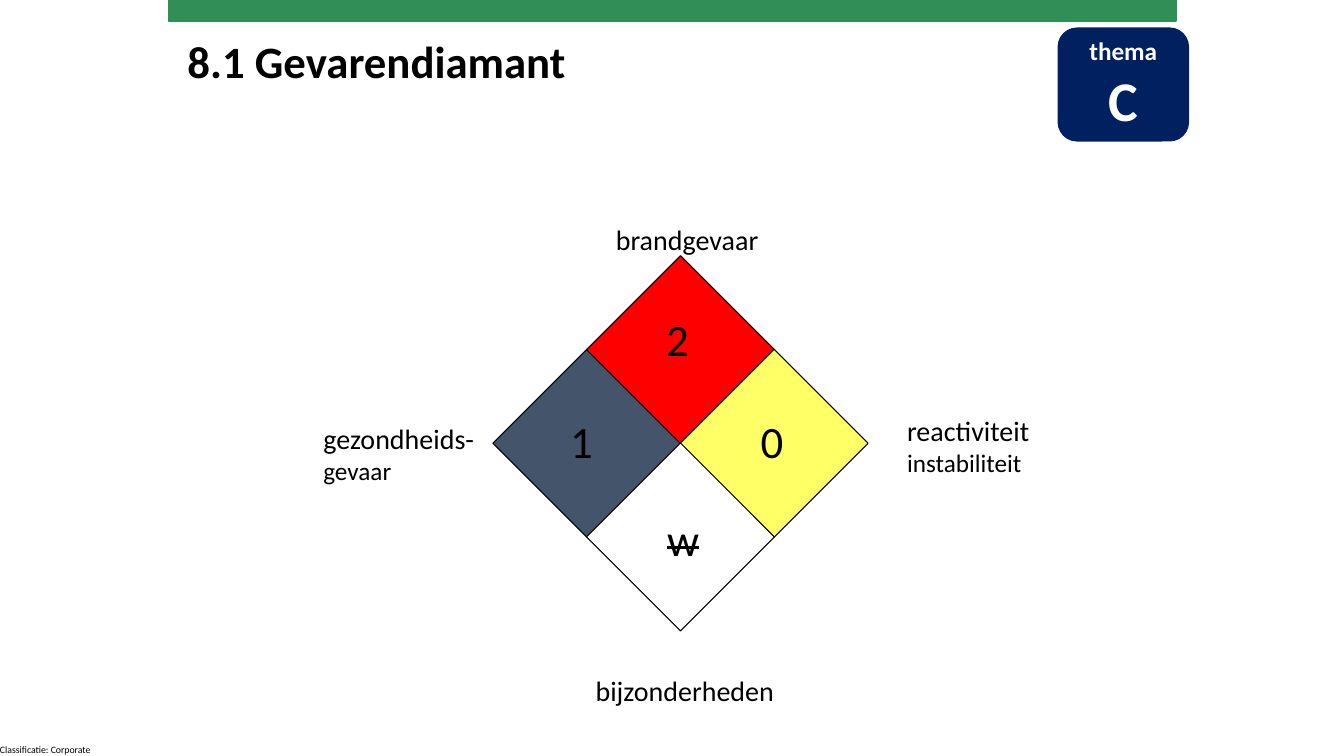
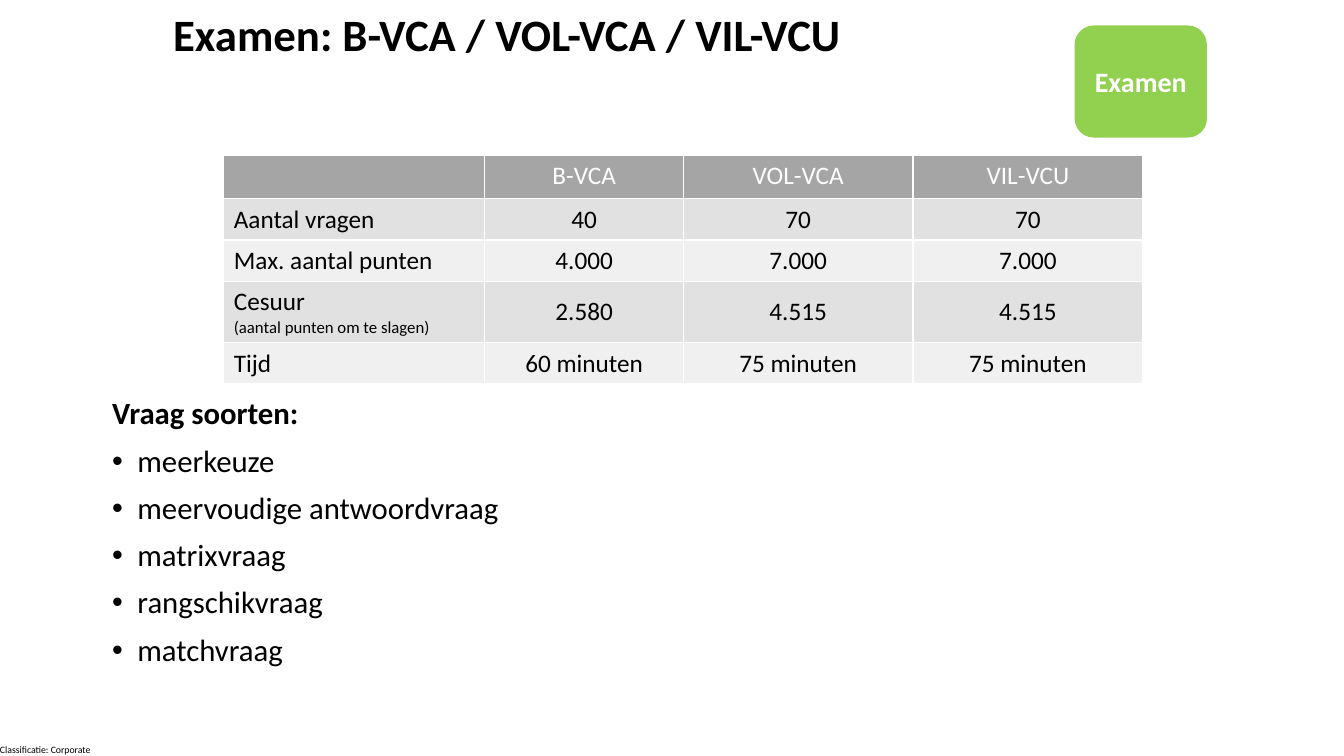
"""Build two safety-course slides: the hazard diamond and the exam overview."""
from lxml import etree
from pptx import Presentation
from pptx.dml.color import RGBColor
from pptx.enum.shapes import MSO_SHAPE
from pptx.enum.text import MSO_ANCHOR, MSO_AUTO_SIZE, PP_ALIGN
from pptx.oxml.ns import qn
from pptx.util import Cm, Pt

RECTANGLE, ROUNDED = MSO_SHAPE.RECTANGLE, MSO_SHAPE.ROUNDED_RECTANGLE
TOP, MIDDLE = MSO_ANCHOR.TOP, MSO_ANCHOR.MIDDLE
LEFT, CENTER = PP_ALIGN.LEFT, PP_ALIGN.CENTER
NO_AUTOFIT = MSO_AUTO_SIZE.NONE

FONT = "Calibri"
COLORS = {
    "black": "000000", "white": "FFFFFF", "green": "328E57", "navy": "002060",
    "lime": "92D050", "slate": "44546A", "red": "FF0000", "yellow": "FFFF66",
    "header": "A5A5A5", "odd_row": "E1E1E1", "even_row": "F0F0F0",
}


def write(frame, text, sizes=(18,), color="black", bold=False, align=LEFT,
          anchor=TOP, spacing=1.0, strike=False):
    """Fill a text frame, one paragraph per line of text."""
    frame.word_wrap = True
    frame.vertical_anchor = anchor
    for index, line in enumerate(text.split("\n")):
        para = frame.paragraphs[0] if index == 0 else frame.add_paragraph()
        para.alignment = align
        para.line_spacing = spacing
        span = para.add_run()
        span.text = line
        span.font.name = FONT
        span.font.size = Pt(sizes[min(index, len(sizes) - 1)])
        span.font.bold = bold
        span.font.color.rgb = RGBColor.from_string(COLORS[color])
        if strike:
            span.font._element.set("strike", "sngStrike")


def add_block(page, kind, area, fill, line, weight=1):
    """Add a filled shape without shadow."""
    block = page.shapes.add_shape(kind, *map(Cm, area))
    block.shadow.inherit = False
    block.fill.solid()
    block.fill.fore_color.rgb = RGBColor.from_string(COLORS[fill])
    block.line.color.rgb = RGBColor.from_string(COLORS[line])
    block.line.width = Pt(weight)
    return block


deck = Presentation()
deck.slide_width, deck.slide_height = Cm(33.87), Cm(19.05)
diamond_page = deck.slides.add_slide(deck.slide_layouts[5])
exam_page = deck.slides.add_slide(deck.slide_layouts[1])

footer = diamond_page.shapes.add_textbox(Cm(0), Cm(18.75), Cm(3), Cm(0.3))
frame = footer.text_frame
frame.margin_left = frame.margin_right = frame.margin_top = frame.margin_bottom = 0
write(frame, "Classificatie: Corporate", (7,))
footer.element.nvSpPr.cNvPr.set("id", "20")
deck.slide_master.shapes.element.append(footer.element)

pages = [
    (diamond_page, "8.1 Gevarendiamant", (4.47, 0.71, 22.86, 3.18), 1.0,
     "thema\nC", (18, 40), "navy", (26.67, 0.71, 3.28, 2.84)),
    (exam_page, "Examen: B-VCA / VOL-VCA / VIL-VCU", (4.11, 0.2, 29.21, 3.68), 0.9,
     "Examen", (20,), "lime", (27.1, 0.66, 3.3, 2.79)),
]
for page, heading, area, spacing, theme, sizes, fill, badge_area in pages:
    title = page.shapes.title
    title.left, title.top, title.width, title.height = map(Cm, area)
    title.text_frame.auto_size = NO_AUTOFIT
    write(title.text_frame, heading, (32,), bold=True, spacing=spacing)
    badge = add_block(page, ROUNDED, badge_area, fill, fill)
    write(badge.text_frame, theme, sizes, "white", True, CENTER, MIDDLE)

add_block(diamond_page, RECTANGLE, (4.24, 0, 25.4, 0.53), "green", "green")

center_x, center_y, reach, side = 17.15, 11.17, 2.36, 3.35
squares = [(-1, 0, "slate"), (0, -1, "red"), (1, 0, "yellow"), (0, 1, "white")]
for across, down, fill in squares:
    left = center_x + across * reach - side / 2
    top = center_y + down * reach - side / 2
    square = add_block(diamond_page, RECTANGLE, (left, top, side, side), fill, "black", 0.75)
    square.rotation = 315

labels = [
    ("brandgevaar", (20,), 15.27, 5.49, 5),
    ("gezondheids-\ngevaar", (20, 18), 7.9, 10.49, 4.6),
    ("reactiviteit\ninstabiliteit", (20, 18), 22.61, 10.29, 5.9),
    ("bijzonderheden", (20,), 14.76, 16.84, 5.5),
    ("1", (32,), 14.12, 10.31, 1.4),
    ("2", (32,), 16.54, 7.72, 1.4),
    ("0", (32,), 18.92, 10.31, 1.4),
    ("w", (32,), 16.56, 12.78, 1.4),
]
for text, sizes, left, top, width in labels:
    height = 0.25 + sum(sizes) * 0.043
    box = diamond_page.shapes.add_textbox(*map(Cm, (left, top, width, height)))
    write(box.text_frame, text, sizes, strike=text == "w")

body = exam_page.placeholders[1]
body.left, body.top, body.width, body.height = map(Cm, (2.57, 9.91, 29.21, 6.83))
body.text_frame.auto_size = NO_AUTOFIT
kinds = "Vraag soorten:\nmeerkeuze\nmeervoudige antwoordvraag\nmatrixvraag\nrangschikvraag\nmatchvraag"
write(body.text_frame, kinds, (22,), spacing=0.9)
for index, para in enumerate(body.text_frame.paragraphs):
    properties = para._p.get_or_add_pPr()
    properties.set("marL", str(Cm(0.64)))
    properties.set("indent", str(-Cm(0.64)))
    if index == 0:
        etree.SubElement(properties, qn("a:buNone"))
    else:
        etree.SubElement(properties, qn("a:buChar")).set("char", "•")
    para.space_before = Pt(10 if index else 0)
    para.runs[0].font.bold = index == 0

rows = [
    ("", "B-VCA", "VOL-VCA", "VIL-VCU"),
    ("Aantal vragen", "40", "70", "70"),
    ("Max. aantal punten", "4.000", "7.000", "7.000"),
    ("Cesuur\n(aantal punten om te slagen)", "2.580", "4.515", "4.515"),
    ("Tijd", "60 minuten", "75 minuten", "75 minuten"),
]
widths = (6.58, 5, 5.79, 5.79)
heights = (1.09, 1.04, 1.04, 1.52, 1.04)
table = exam_page.shapes.add_table(
    len(rows), len(widths), Cm(5.64), Cm(3.92), Cm(sum(widths)), Cm(sum(heights))).table
for column, width in zip(table.columns, widths):
    column.width = Cm(width)
for row_index, (row, height) in enumerate(zip(rows, heights)):
    table.rows[row_index].height = Cm(height)
    fill = "header" if row_index == 0 else ("even_row", "odd_row")[row_index % 2]
    for column_index, text in enumerate(row):
        cell = table.cell(row_index, column_index)
        cell.fill.solid()
        cell.fill.fore_color.rgb = RGBColor.from_string(COLORS[fill])
        cell.vertical_anchor = MIDDLE if row_index else TOP
        if text:
            write(cell.text_frame, text, (18, 12), "black" if row_index else "white",
                  align=CENTER if column_index else LEFT, anchor=cell.vertical_anchor)

deck.save("out.pptx")
